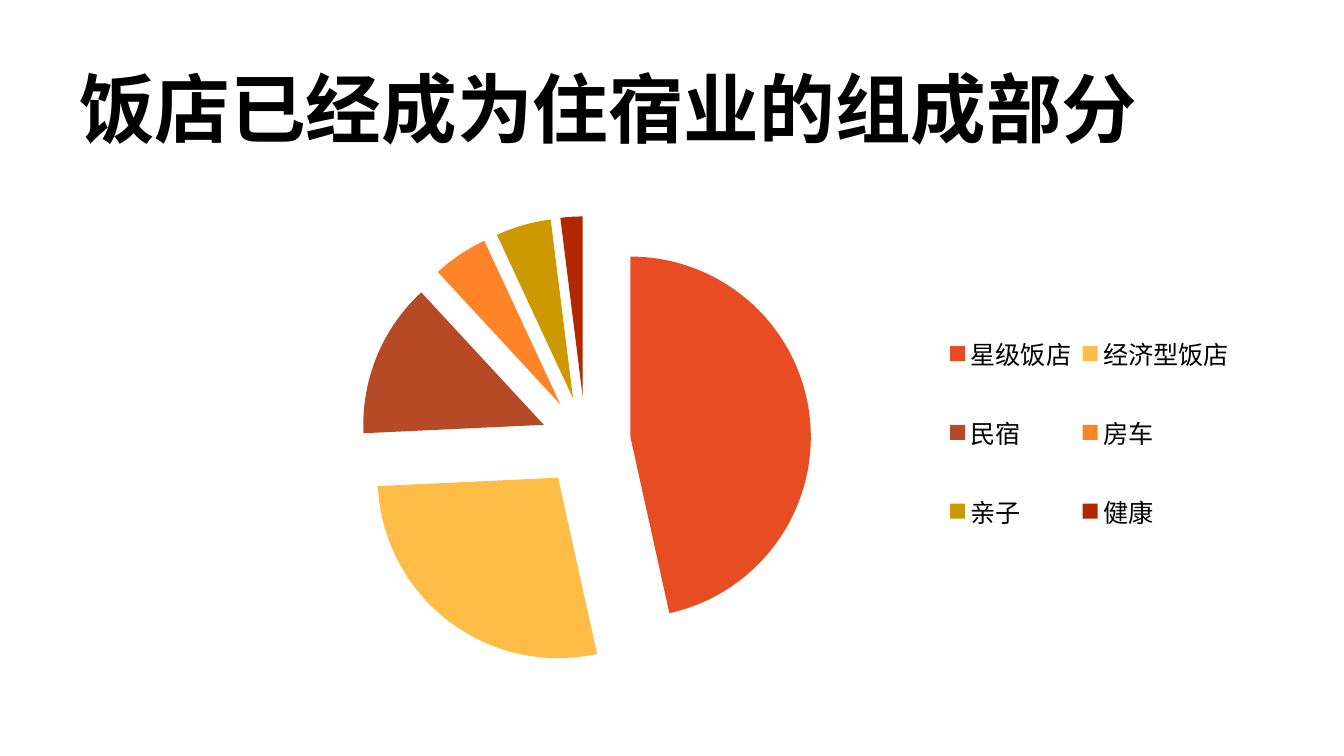
import dataclasses

import lxml.etree
import pptx
import pptx.chart.data
import pptx.dml.color
import pptx.enum.chart
import pptx.enum.text
import pptx.oxml.ns
import pptx.util

PX = pptx.util.Inches(1) / 100.8


def px(length):
    return pptx.util.Emu(round(length * PX))


def apply(target, values):
    for name, value in values.items():
        setattr(target, name, value)


def add_xml(parent, tag, **attributes):
    return lxml.etree.SubElement(parent, pptx.oxml.ns.qn(tag), attributes)


@dataclasses.dataclass(frozen=True)
class Theme:
    ink: str = "000000"
    paper: str = "FFFFFF"
    slices: tuple = ("E84C22", "FFBD47", "B64926", "FF8427", "CC9900", "B22600")
    title_font: str = "Noto Sans CJK SC"
    chart_font: str = "Calibri"
    title_size: int = 54
    chart_size: int = 18


class SlideBuilder:
    def __init__(self, slide, theme):
        self.slide = slide
        self.theme = theme
        self.paint(slide.background.fill, theme.paper)

    def paint(self, fill, color):
        fill.solid()
        fill.fore_color.rgb = pptx.dml.color.RGBColor.from_string(color)

    def style_font(self, font, name, size, bold):
        apply(font, {"name": name, "size": pptx.util.Pt(size), "bold": bold})
        self.paint(font.fill, self.theme.ink)

    def place(self, shape, box):
        apply(shape, dict(zip(("left", "top", "width", "height"), map(px, box))))

    def title(self, text, box):
        holder = self.slide.shapes.title
        self.place(holder, box)
        frame = holder.text_frame
        apply(frame, {
            "word_wrap": True,
            "auto_size": pptx.enum.text.MSO_AUTO_SIZE.NONE,
            "vertical_anchor": pptx.enum.text.MSO_ANCHOR.MIDDLE,
        })
        para = frame.paragraphs[0]
        apply(para, {"alignment": pptx.enum.text.PP_ALIGN.LEFT, "line_spacing": 0.9})
        span = para.add_run()
        span.text = text
        self.style_font(span.font, self.theme.title_font, self.theme.title_size, True)
        add_xml(span.font._element, "a:ea", typeface=self.theme.title_font)

    def layout(self, parent, position, after, inner=False):
        for old in parent.findall(pptx.oxml.ns.qn("c:layout")):
            parent.remove(old)
        layout = add_xml(parent, "c:layout")
        manual = add_xml(layout, "c:manualLayout")
        if inner:
            add_xml(manual, "c:layoutTarget", val="inner")
        for tag in ("xMode", "yMode"):
            add_xml(manual, f"c:{tag}", val="edge")
        for tag, value in zip("xywh", position):
            add_xml(manual, f"c:{tag}", val=str(value))
        parent.insert(after, layout)

    def pie(self, shares, box, explosion, plot_area, legend_area):
        data = pptx.chart.data.CategoryChartData()
        data.categories = list(shares)
        data.add_series("Series 1", list(shares.values()))
        chart = self.slide.shapes.add_chart(
            pptx.enum.chart.XL_CHART_TYPE.PIE, *map(px, box), data
        ).chart
        apply(chart, {"has_title": False, "has_legend": True})
        self.style_font(chart.font, self.theme.chart_font, self.theme.chart_size, False)
        apply(chart.legend, {
            "position": pptx.enum.chart.XL_LEGEND_POSITION.RIGHT,
            "include_in_layout": False,
        })
        plot = chart.plots[0]
        plot.vary_by_categories = True
        series = plot.series[0]
        for index, color in enumerate(self.theme.slices):
            self.paint(series.points[index].format.fill, color)
        burst = add_xml(series._element, "c:explosion", val=str(explosion))
        series._element.find(pptx.oxml.ns.qn("c:dPt")).addprevious(burst)
        for point in series._element.findall(pptx.oxml.ns.qn("c:dPt")):
            point_burst = add_xml(point, "c:explosion", val=str(explosion))
            point.find(pptx.oxml.ns.qn("c:spPr")).addprevious(point_burst)
        self.layout(plot._element.getparent(), plot_area, 0, inner=True)
        self.layout(chart.legend._element, legend_area, 1)


def main():
    deck = pptx.Presentation()
    apply(deck, {"slide_width": px(1344), "slide_height": px(756)})
    page = SlideBuilder(deck.slides.add_slide(deck.slide_layouts[5]), Theme())
    page.title("饭店已经成为住宿业的组成部分", (69, 40, 1183, 146))
    lodging = {"星级饭店": 47, "经济型饭店": 28, "民宿": 14, "房车": 5, "亲子": 5, "健康": 2}
    page.pie(
        lodging,
        box=(93, 202, 1159, 480),
        explosion=25,
        plot_area=(0.23, 0.03, 0.39, 0.94),
        legend_area=(0.73, 0.19, 0.26, 0.58),
    )
    deck.save("out.pptx")


if __name__ == "__main__":
    main()
